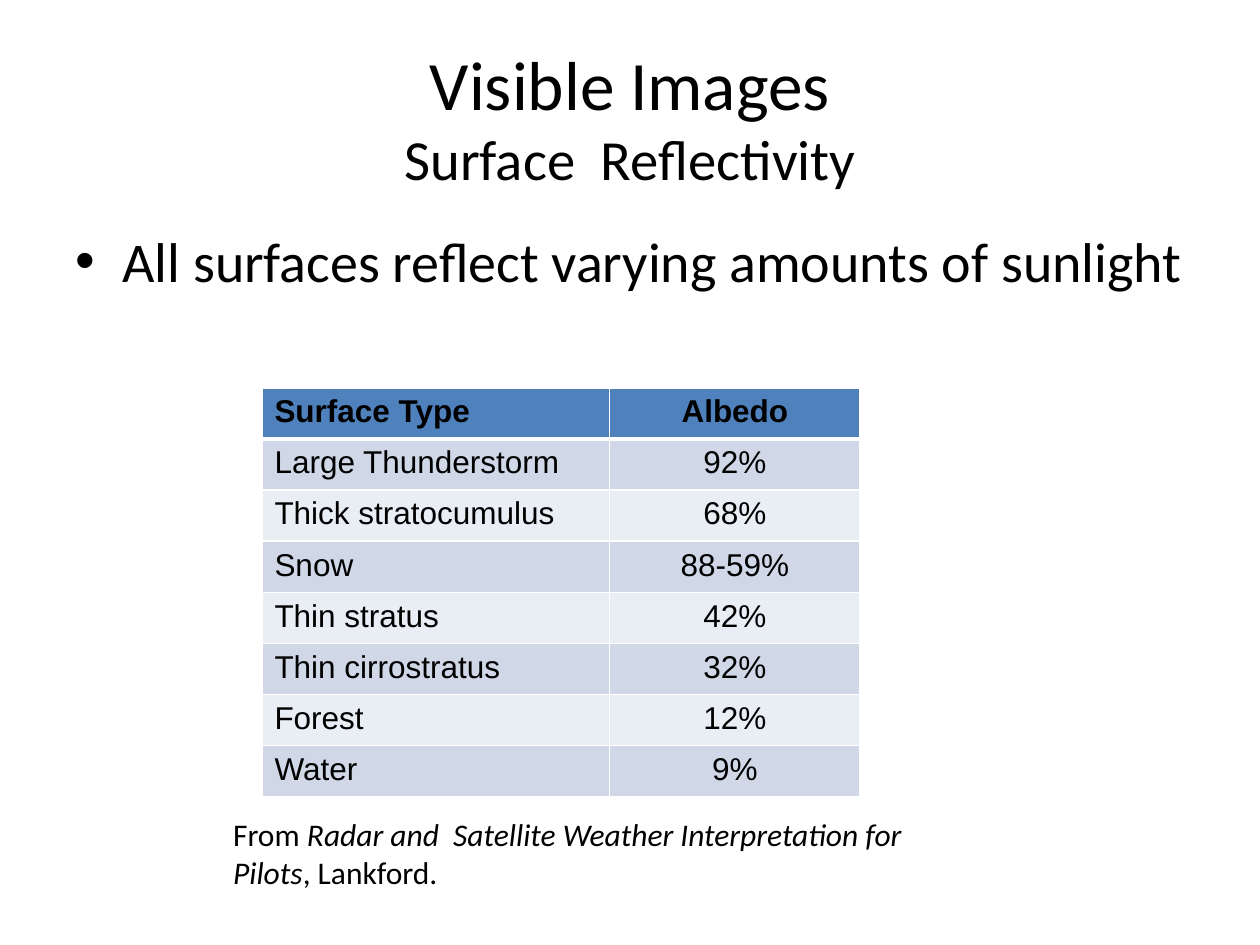
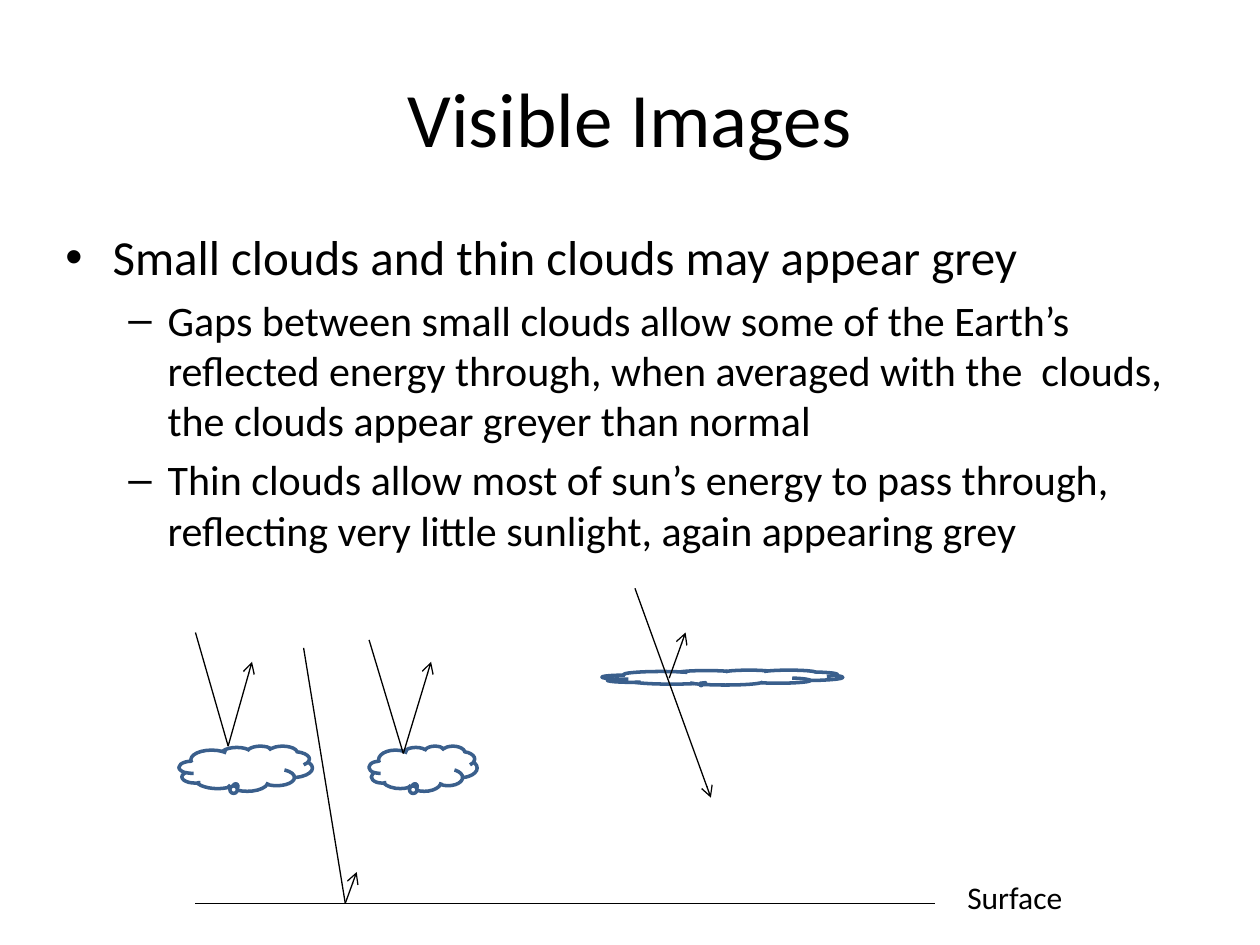
from pptx import Presentation
from pptx.dml.color import RGBColor
from pptx.enum.shapes import MSO_CONNECTOR, MSO_SHAPE
from pptx.enum.text import MSO_ANCHOR, PP_ALIGN
from pptx.oxml.ns import qn
from pptx.util import Cm, Pt
from lxml import etree

STRAIGHT = MSO_CONNECTOR.STRAIGHT
CLOUD = MSO_SHAPE.CLOUD_CALLOUT
TOP, MIDDLE = MSO_ANCHOR.TOP, MSO_ANCHOR.MIDDLE
LEFT, CENTER = PP_ALIGN.LEFT, PP_ALIGN.CENTER

BLACK = RGBColor(0x00, 0x00, 0x00)
WHITE = RGBColor(0xFF, 0xFF, 0xFF)
HEADER_BLUE = RGBColor(0x4F, 0x81, 0xBD)
BANDS = RGBColor(0xD0, 0xD8, 0xE8), RGBColor(0xE9, 0xED, 0xF4)
CLOUD_EDGE = RGBColor(0x3A, 0x5F, 0x8C)
BODY_FONT, TABLE_FONT = "Calibri", "Arial"

# Content: body items are (level, size, text); boxes are left, top, width, height in cm
TITLE_BOX = 1.27, 0.76, 22.86, 3.18
LEVELS = [("•", 0.95, 0.95), ("–", 2.06, 0.79)]  # bullet, margin, hanging indent

ALBEDO_TITLE = [("Visible Images\v", 39.6), ("Surface  Reflectivity", 32.4)]
ALBEDO_BODY = [(0, 32, "All surfaces reflect varying amounts of sunlight")]
ALBEDO_ROWS = [
    ("Surface Type", "Albedo"),
    ("Large Thunderstorm", "92%"),
    ("Thick stratocumulus", "68%"),
    ("Snow", "88-59%"),
    ("Thin stratus", "42%"),
    ("Thin cirrostratus", "32%"),
    ("Forest", "12%"),
    ("Water", "9%"),
]
COLUMN_WIDTHS, ROW_HEIGHT = (7.01, 5.05), 1.03
CITATION = ["From ", "Radar and  Satellite Weather Interpretation for Pilots",
            ", Lankford."]

CLOUDS_TITLE = [("Visible Images", 44)]
CLOUDS_BODY = [
    (0, 28, "Small clouds and thin clouds may appear grey"),
    (1, 24, "Gaps between small clouds allow some of the Earth’s reflected energy "
            "through, when averaged with the  clouds, the clouds appear greyer "
            "than normal"),
    (1, 24, "Thin clouds allow most of sun’s energy to pass through, reflecting "
            "very little sunlight, again appearing grey"),
]
SURFACE = [(3.94, 18.21), (18.85, 18.21)]
CLOUDS = [(3.61, 15.04, 2.69, 0.91), (12.14, 13.51, 4.85, 0.3),
          (7.44, 15.04, 2.18, 0.91)]
RAYS = [
    [(3.94, 12.75), (4.6, 15.04), (5.08, 13.34)],
    [(7.44, 12.9), (8.13, 15.19), (8.69, 13.34)],
    [(6.12, 13.06), (6.96, 18.21), (7.19, 17.58)],
    [(12.8, 11.86), (14.33, 16.08)],
    [(13.49, 13.67), (13.82, 12.75)],
]


def style(font, size, name=BODY_FONT, bold=False, italic=False):
    font.name, font.size = name, Pt(size)
    font.bold, font.italic = bold, italic
    font.color.rgb = BLACK


def add_text_frame(slide, box, anchor=TOP, wrap=True):
    tf = slide.shapes.add_textbox(*map(Cm, box)).text_frame
    tf.word_wrap, tf.vertical_anchor = wrap, anchor
    return tf


def add_title(slide, lines):
    tf = add_text_frame(slide, TITLE_BOX, MIDDLE)
    tf.text = "".join(text for text, _ in lines)
    p = tf.paragraphs[0]
    p.alignment = CENTER
    for r, (_, size) in zip(p.runs, lines):
        style(r.font, size)


def add_body(slide, box, items):
    tf = add_text_frame(slide, box)
    tf.text = "\n".join(text for _, _, text in items)
    for i, (p, (level, size, _)) in enumerate(zip(tf.paragraphs, items)):
        bullet, margin, hang = LEVELS[level]
        p.level = level
        pPr = p._p.get_or_add_pPr()
        pPr.set("marL", str(Cm(margin)))
        pPr.set("indent", str(-Cm(hang)))
        etree.SubElement(pPr, qn("a:buFont"), typeface="Arial")
        etree.SubElement(pPr, qn("a:buChar"), char=bullet)
        p.space_before = Pt(0.2 * size if i else 0)
        style(p.runs[0].font, size)


def set_borders(cell, bottom):
    tcPr = cell._tc.get_or_add_tcPr()
    for side, width in zip("LRTB", (1, 1, 1, bottom)):
        ln = etree.SubElement(tcPr, qn(f"a:ln{side}"), w=str(Pt(width)))
        fill = etree.SubElement(ln, qn("a:solidFill"))
        etree.SubElement(fill, qn("a:srgbClr"), val=str(WHITE))


def add_albedo_table(slide, left, top):
    width, height = sum(COLUMN_WIDTHS), ROW_HEIGHT * len(ALBEDO_ROWS)
    table = slide.shapes.add_table(len(ALBEDO_ROWS), len(COLUMN_WIDTHS),
                                   *map(Cm, (left, top, width, height))).table
    for column, w in zip(table.columns, COLUMN_WIDTHS):
        column.width = Cm(w)
    for i, row in enumerate(ALBEDO_ROWS):
        header = i == 0
        table.rows[i].height = Cm(ROW_HEIGHT)
        for j, text in enumerate(row):
            cell = table.cell(i, j)
            set_borders(cell, bottom=3 if header else 1)
            cell.fill.solid()
            cell.fill.fore_color.rgb = HEADER_BLUE if header else BANDS[(i - 1) % 2]
            cell.text = text
            p = cell.text_frame.paragraphs[0]
            p.alignment = CENTER if j else LEFT
            style(p.runs[0].font, 18, TABLE_FONT, bold=header)


def add_line(slide, start, end, arrow=False):
    line = slide.shapes.add_connector(STRAIGHT, *map(Cm, start + end))
    line.line.color.rgb, line.line.width = BLACK, Pt(0.75)
    if arrow:
        etree.SubElement(line.line._get_or_add_ln(), qn("a:tailEnd"), type="arrow")
    etree.SubElement(line._element.spPr, qn("a:effectLst"))


def add_cloud(slide, box):
    sp = slide.shapes.add_shape(CLOUD, *map(Cm, box))
    sp.adjustments[0], sp.adjustments[1] = -0.072, 0.371
    sp.shadow.inherit = False
    sp.fill.solid()
    sp.fill.fore_color.rgb = WHITE
    sp.line.color.rgb, sp.line.width = CLOUD_EDGE, Pt(2)


def build_albedo_slide(slide):
    add_title(slide, ALBEDO_TITLE)
    add_body(slide, (1.27, 4.45, 22.86, 5.28), ALBEDO_BODY)
    add_albedo_table(slide, 5.28, 7.82)
    p = add_text_frame(slide, (4.45, 16.31, 14.81, 1.8)).paragraphs[0]
    for i, text in enumerate(CITATION):
        r = p.add_run()
        r.text = text
        style(r.font, 18, italic=i == 1)


def build_clouds_slide(slide):
    add_title(slide, CLOUDS_TITLE)
    add_body(slide, (1.07, 4.45, 22.86, 12.57), CLOUDS_BODY)
    add_line(slide, *SURFACE)
    for box in CLOUDS:
        add_cloud(slide, box)
    for ray in RAYS:
        for start, end in zip(ray, ray[1:]):
            add_line(slide, start, end, arrow=end == ray[-1])
    tf = add_text_frame(slide, (19.25, 17.58, 2.72, 1.02), wrap=False)
    tf.text = "Surface"
    style(tf.paragraphs[0].runs[0].font, 18)


def main():
    prs = Presentation()
    prs.slide_width, prs.slide_height = Cm(25.4), Cm(19.05)
    for build in (build_albedo_slide, build_clouds_slide):
        build(prs.slides.add_slide(prs.slide_layouts[6]))
    prs.save("out.pptx")


if __name__ == "__main__":
    main()
